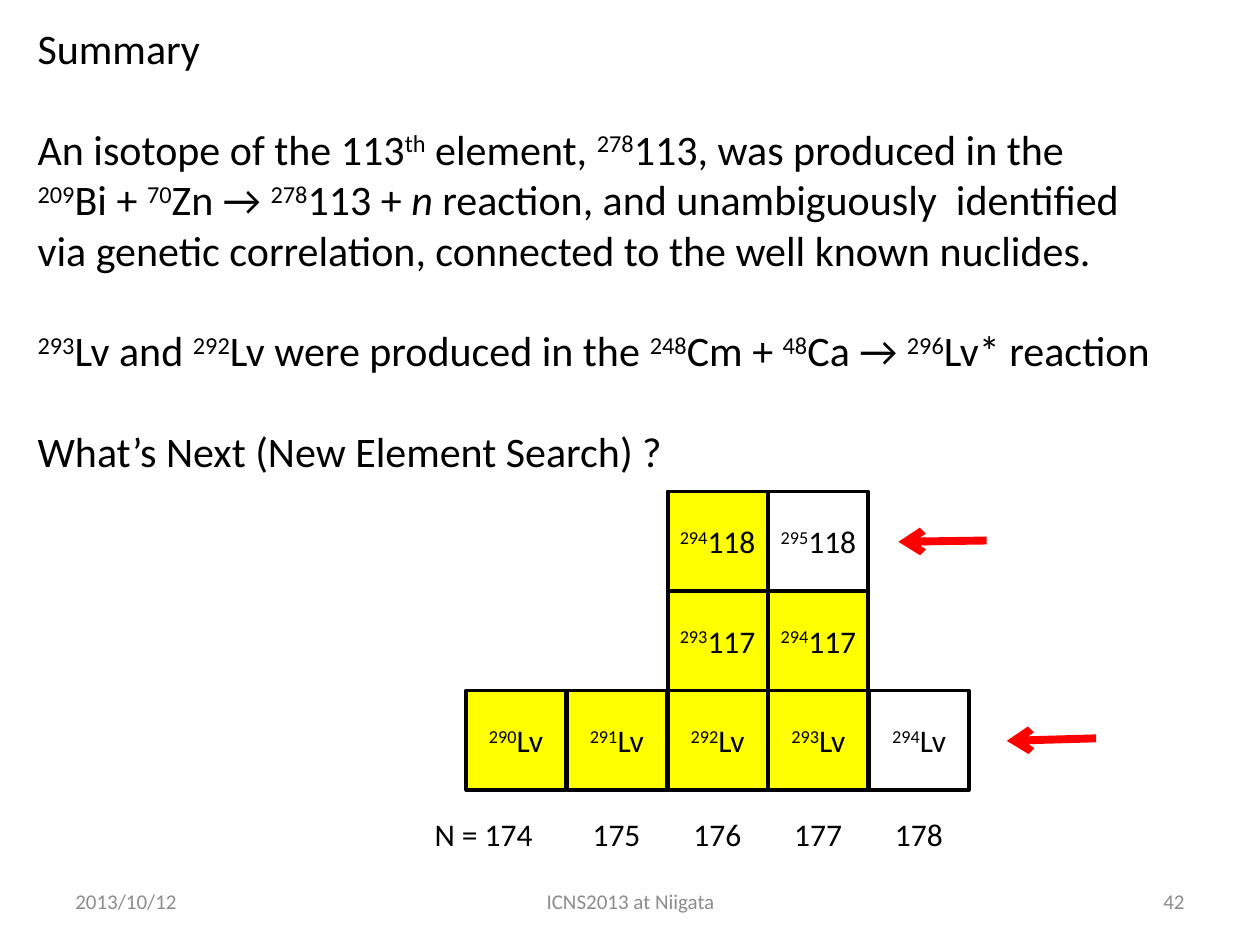
from typing import NamedTuple

from pptx import Presentation
from pptx.dml.color import RGBColor
from pptx.enum.shapes import MSO_CONNECTOR as Link, MSO_SHAPE as Shape
from pptx.enum.text import MSO_ANCHOR as Anchor, MSO_AUTO_SIZE as Fit, PP_ALIGN as Align
from pptx.oxml.ns import qn
from pptx.util import Inches, Pt
from lxml.etree import SubElement

BLACK = RGBColor(0, 0, 0)
GRAY = RGBColor(0x8C, 0x8C, 0x8C)
WHITE = RGBColor(0xFF, 0xFF, 0xFF)
YELLOW = RGBColor(0xFF, 0xFF, 0)
RED = RGBColor(0xFF, 0, 0)
FONT = "Calibri"

GRID_X, GRID_Y = 3.7, 3.9
STEP_X, STEP_Y = 0.8, 0.79
SIDE = 0.79


class Footer(NamedTuple):
    text: str
    left: float
    width: float
    align: Align


class Cell(NamedTuple):
    mass: str
    name: str
    col: int
    row: int
    fill: RGBColor = YELLOW


class Arrow(NamedTuple):
    x: float
    y: float
    end_x: float
    end_y: float


FOOTERS = [
    Footer("2013/10/12", 0.5, 2.33, Align.LEFT),
    Footer("ICNS2013 at Niigata", 3.42, 3.17, Align.CENTER),
    Footer("42", 7.17, 2.33, Align.RIGHT),
]

# Between bars, "^" raises a piece and "/" slants it.
# The flag tells whether a gap of one line comes before.
SUMMARY = [
    ("Summary", False),
    ("An isotope of the 113|^th| element, |^278|113, was produced in the", True),
    ("|^209|Bi + |^70|Zn → |^278|113 + |/n| reaction, and unambiguously  identified", False),
    ("via genetic correlation, connected to the well known nuclides.", False),
    ("|^293|Lv and |^292|Lv were produced in the |^248|Cm + |^48|Ca → |^296|Lv* reaction", True),
    ("What’s Next (New Element Search) ?", True),
]

CELLS = [
    Cell("294", "118", 2, 0),
    Cell("295", "118", 3, 0, WHITE),
    Cell("293", "117", 2, 1),
    Cell("294", "117", 3, 1),
    Cell("290", "Lv", 0, 2),
    Cell("291", "Lv", 1, 2),
    Cell("292", "Lv", 2, 2),
    Cell("293", "Lv", 3, 2),
    Cell("294", "Lv", 4, 2, WHITE),
]

ARROWS = [Arrow(7.83, 4.29, 7.13, 4.3), Arrow(8.7, 5.86, 7.99, 5.88)]


def style(run, size: float, color: RGBColor = BLACK) -> None:
    run.font.name = FONT
    run.font.size = Pt(size)
    run.font.color.rgb = color


def write(para, text: str, size: float) -> None:
    """Fill a paragraph from marked text."""
    for piece in filter(None, text.split("|")):
        run = para.add_run()
        run.text = piece.lstrip("^/")
        style(run, size)
        if piece.startswith("^"):
            run.font._element.set("baseline", "30000")
        elif piece.startswith("/"):
            run.font.italic = True


def add_box(slide, left: float, top: float, width: float, height: float):
    box = slide.shapes.add_textbox(Inches(left), Inches(top), Inches(width), Inches(height))
    return box.text_frame


def add_footer(slide, item: Footer) -> None:
    frame = add_box(slide, item.left, 6.95, item.width, 0.4)
    frame.word_wrap = True
    frame.vertical_anchor = Anchor.MIDDLE
    frame.text = item.text
    para = frame.paragraphs[0]
    para.alignment = item.align
    style(para.runs[0], 12, GRAY)


def add_summary(slide) -> None:
    frame = add_box(slide, 0.2, 0.13, 9.35, 4.54)
    frame.word_wrap = False
    for i, (text, gap) in enumerate(SUMMARY):
        para = frame.add_paragraph() if i else frame.paragraphs[0]
        para.space_before = Pt(28.8 if gap else 0)
        write(para, text, 24)


def add_cell(slide, cell: Cell) -> None:
    box = slide.shapes.add_shape(
        Shape.RECTANGLE,
        Inches(GRID_X + cell.col * STEP_X), Inches(GRID_Y + cell.row * STEP_Y),
        Inches(SIDE), Inches(SIDE))
    box.shadow.inherit = False
    box.fill.solid()
    box.fill.fore_color.rgb = cell.fill
    box.line.color.rgb = BLACK
    box.line.width = Pt(2)
    frame = box.text_frame
    frame.margin_left = frame.margin_right = frame.margin_top = frame.margin_bottom = 0
    frame.vertical_anchor = Anchor.MIDDLE
    para = frame.paragraphs[0]
    para.alignment = Align.CENTER
    write(para, f"^{cell.mass}|{cell.name}", 18)


def add_axis(slide) -> None:
    """Neutron numbers, with a centred tab under each column."""
    left = 3.35
    frame = add_box(slide, left, 6.42, 4.32, 0.4)
    frame.word_wrap = False
    frame.auto_size = Fit.SHAPE_TO_FIT_TEXT
    para = frame.paragraphs[0]
    para.text = "N = 174\t175\t176\t177\t178"
    style(para.runs[0], 18)
    tabs = SubElement(para._p.get_or_add_pPr(), qn("a:tabLst"))
    for col in range(1, 5):
        mid = GRID_X + col * STEP_X + SIDE / 2
        pos = Inches(mid - left) - frame.margin_left
        SubElement(tabs, qn("a:tab"), pos=str(pos), algn="ctr")


def add_arrow(slide, arrow: Arrow) -> None:
    line = slide.shapes.add_connector(Link.STRAIGHT, *map(Inches, arrow))
    line.line.color.rgb = RED
    line.line.width = Pt(4.5)
    SubElement(line.line._get_or_add_ln(), qn("a:tailEnd"), type="arrow")
    SubElement(line._element.spPr, qn("a:effectLst"))


def main() -> None:
    deck = Presentation()
    deck.slide_width, deck.slide_height = Inches(10), Inches(7.5)
    slide = deck.slides.add_slide(deck.slide_layouts[6])
    for item in FOOTERS:
        add_footer(slide, item)
    add_summary(slide)
    for cell in CELLS:
        add_cell(slide, cell)
    add_axis(slide)
    for arrow in ARROWS:
        add_arrow(slide, arrow)
    deck.save("out.pptx")


if __name__ == "__main__":
    main()
